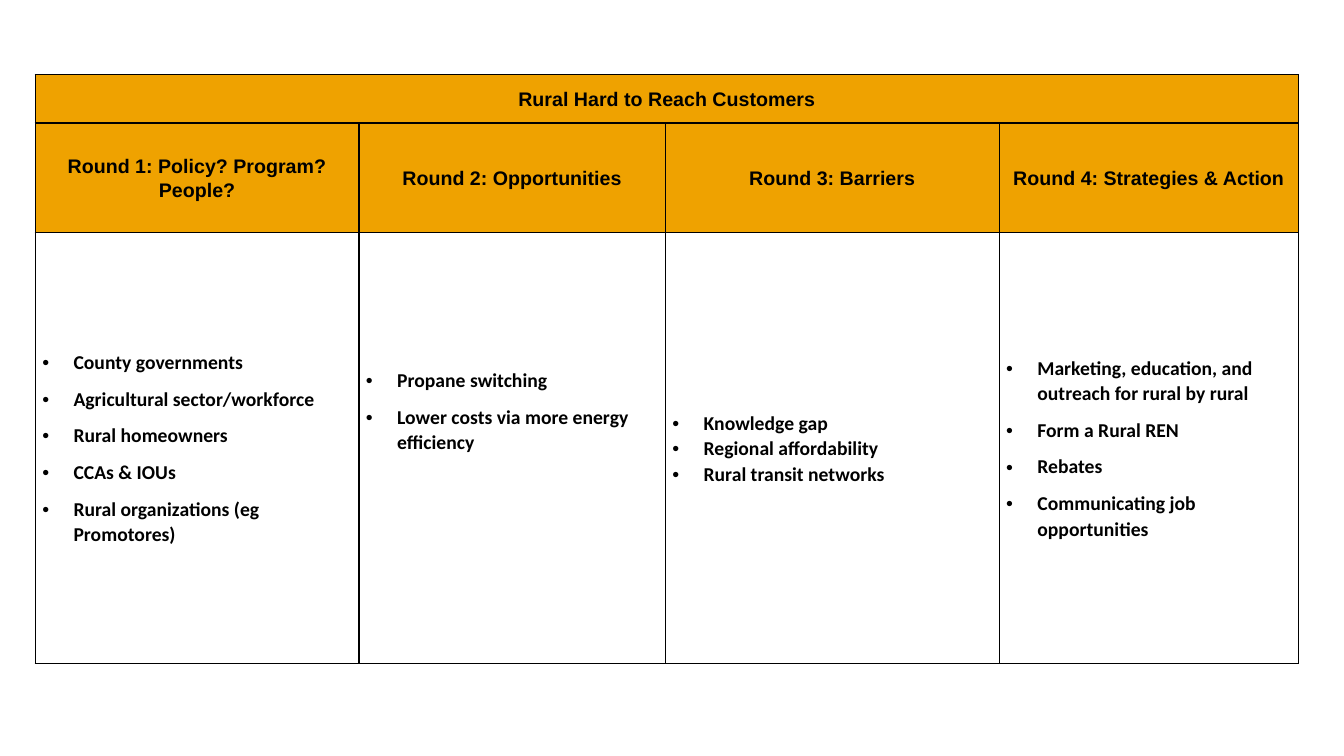
from lxml.etree import SubElement
from pptx import Presentation
from pptx.dml.color import RGBColor
from pptx.enum.text import MSO_ANCHOR, PP_ALIGN
from pptx.oxml.ns import qn
from pptx.util import Inches, Pt

COLORS = {"header": "EFA200", "text": "000000", "border": "000000"}
COLUMN_WIDTHS = [3.21, 3.04, 3.31, 2.97]
ROW_HEIGHTS = [0.48, 1.09, 4.27]
TITLE = "Rural Hard to Reach Customers"
ROUNDS = [
    {
        "heading": "Round 1: Policy? Program? People?",
        "items": [
            "County governments",
            "Agricultural sector/workforce",
            "Rural homeowners",
            "CCAs & IOUs",
            "Rural organizations (eg Promotores)",
        ],
    },
    {
        "heading": "Round 2: Opportunities",
        "items": ["Propane switching", "Lower costs via more energy efficiency"],
        "margin_bottom": 0.73,
    },
    {
        "heading": "Round 3: Barriers",
        "items": ["Knowledge gap", "Regional affordability", "Rural transit networks"],
        "space_after": 0,
    },
    {
        "heading": "Round 4: Strategies & Action",
        "items": [
            "Marketing, education, and outreach for rural by rural",
            "Form a Rural REN",
            "Rebates",
            "Communicating job opportunities",
        ],
    },
]


def write_paragraph(paragraph, text, font="Arial", align=PP_ALIGN.CENTER, space_after=8):
    paragraph.alignment = align
    paragraph.line_spacing = 1.07
    paragraph.space_after = Pt(space_after)
    run = paragraph.add_run()
    run.text = text
    run.font.name = font
    run.font.size = Pt(14)
    run.font.bold = True
    run.font.color.rgb = RGBColor.from_string(COLORS["text"])


def add_bullet(paragraph):
    properties = paragraph._p.get_or_add_pPr()
    properties.set("marL", str(Inches(0.31)))
    properties.set("indent", str(-Inches(0.31)))
    SubElement(properties, qn("a:buFont"), typeface="Arial")
    SubElement(properties, qn("a:buChar"), char="•")


def set_borders(cell):
    properties = cell._tc.get_or_add_tcPr()
    for position, side in enumerate(("lnL", "lnR", "lnT", "lnB")):
        line = SubElement(properties, qn(f"a:{side}"), w=str(Pt(1)))
        fill = SubElement(line, qn("a:solidFill"))
        SubElement(fill, qn("a:srgbClr"), val=COLORS["border"])
        properties.insert(position, line)


def style_cell(cell, fill=None, margin_bottom=0):
    cell.vertical_anchor = MSO_ANCHOR.MIDDLE
    cell.margin_left = cell.margin_right = Inches(0.07)
    cell.margin_top = 0
    cell.margin_bottom = Inches(margin_bottom)
    if fill:
        cell.fill.solid()
        cell.fill.fore_color.rgb = RGBColor.from_string(fill)
    else:
        cell.fill.background()
    set_borders(cell)


def fill_header(cell, text):
    style_cell(cell, fill=COLORS["header"])
    write_paragraph(cell.text_frame.paragraphs[0], text)


def fill_bullets(cell, items, space_after=8, margin_bottom=0):
    style_cell(cell, margin_bottom=margin_bottom)
    frame = cell.text_frame
    for index, item in enumerate(items):
        paragraph = frame.add_paragraph() if index else frame.paragraphs[0]
        write_paragraph(paragraph, item, font="Calibri", align=PP_ALIGN.LEFT, space_after=space_after)
        add_bullet(paragraph)


def add_rounds_table(slide):
    table = slide.shapes.add_table(
        len(ROW_HEIGHTS), len(COLUMN_WIDTHS), Inches(0.35), Inches(0.74),
        Inches(sum(COLUMN_WIDTHS)), Inches(sum(ROW_HEIGHTS)),
    ).table
    table.first_row = table.horz_banding = False
    for column, width in zip(table.columns, COLUMN_WIDTHS):
        column.width = Inches(width)
    for row, height in zip(table.rows, ROW_HEIGHTS):
        row.height = Inches(height)

    table.cell(0, 0).merge(table.cell(0, len(COLUMN_WIDTHS) - 1))
    fill_header(table.cell(0, 0), TITLE)
    for index, content in enumerate(ROUNDS):
        if index:
            style_cell(table.cell(0, index), fill=COLORS["header"])
        fill_header(table.cell(1, index), content["heading"])
        fill_bullets(
            table.cell(2, index),
            content["items"],
            space_after=content.get("space_after", 8),
            margin_bottom=content.get("margin_bottom", 0),
        )


def main():
    presentation = Presentation()
    presentation.slide_width = Inches(13.33)
    presentation.slide_height = Inches(7.5)
    slide = presentation.slides.add_slide(presentation.slide_layouts[6])
    add_rounds_table(slide)
    presentation.save("out.pptx")


if __name__ == "__main__":
    main()
